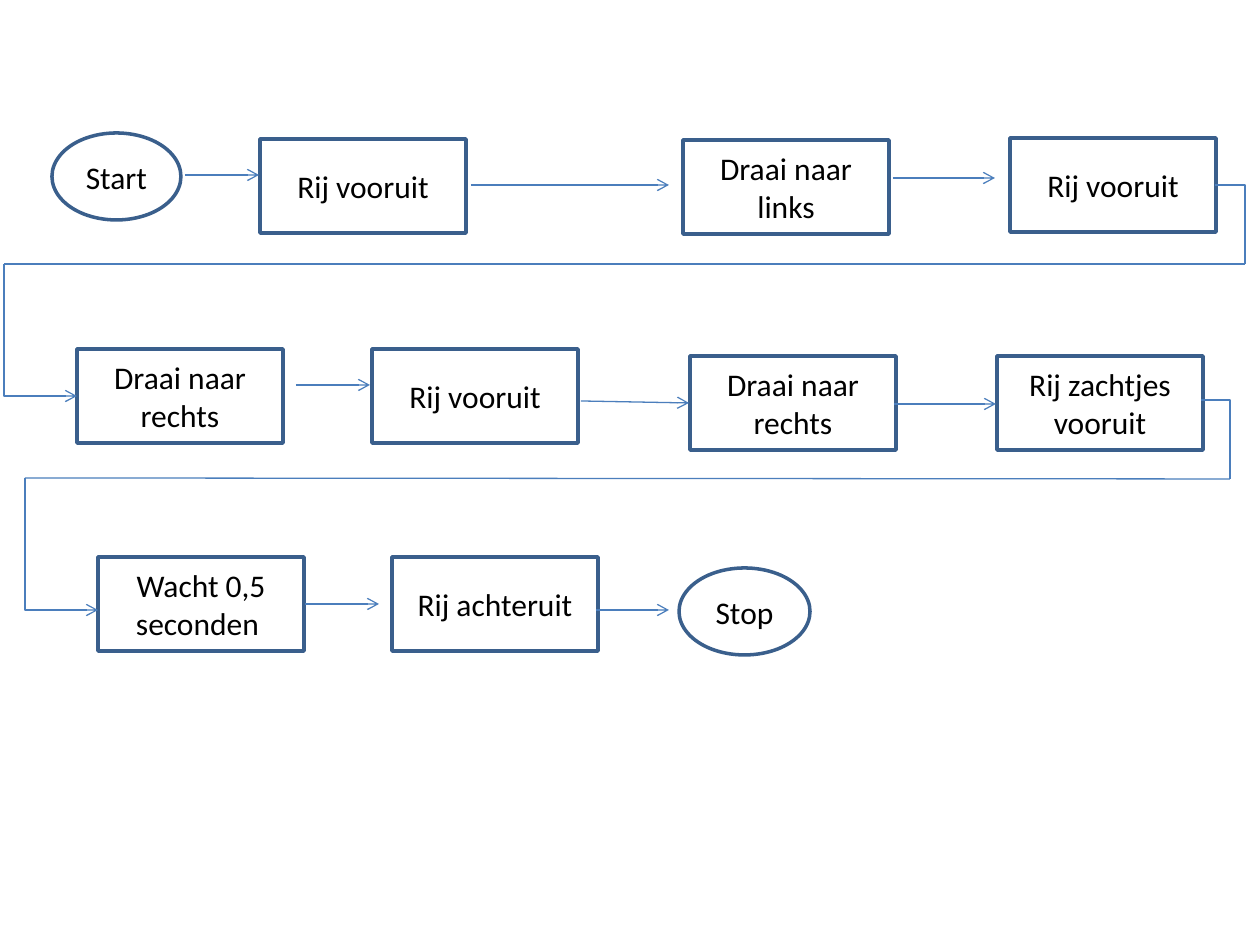
from dataclasses import dataclass
from lxml import etree
from pptx import Presentation
from pptx import util as u
from pptx.dml.color import RGBColor
from pptx.enum import shapes, text
from pptx.oxml.ns import qn

PX = 914400 // 126


@dataclass(frozen=True)
class Theme:
    font: str = "Calibri"
    size: float = 18
    ink: str = "000000"
    outline: str = "3A5F8C"
    outline_width: float = 2
    arrow: str = "4B7EBC"
    arrow_width: float = 0.75


THEME = Theme()
SLIDE_SIZE = (1260, 945)
STEP_SIZE = (206, 94)

STEPS = [
    ("Rij vooruit", 260, 139),
    ("Draai naar links", 683, 140),
    ("Rij vooruit", 1010, 138),
    ("Draai naar rechts", 77, 349),
    ("Rij vooruit", 372, 349),
    ("Draai naar rechts", 690, 356),
    ("Rij zachtjes vooruit", 997, 356),
    ("Wacht 0,5 seconden ", 98, 557),
    ("Rij achteruit", 392, 557),
]
TERMINALS = [
    ("Start", 52, 133, 129, 87),
    ("Stop", 679, 568, 131, 87),
]
ARROWS = [
    ((185, 175), (259, 175)),
    ((471, 185), (669, 185)),
    ((893, 178), (995, 178)),
    ((296, 385), (370, 385)),
    ((581, 401), (689, 403)),
    ((894, 404), (996, 404)),
    ((305, 604), (379, 604)),
    ((596, 610), (669, 610)),
]
ROW_RETURNS = [
    ((1215, 185), (1245, 264), (4, 264), (77, 396)),
    ((1201, 400), (1230, 479), (25, 478), (98, 610)),
]


def emu(*lengths):
    return [u.Emu(round(length * PX)) for length in lengths]


def add_step(slide, preset, label, *box):
    shape = slide.shapes.add_shape(preset, *emu(*box))
    shape.shadow.inherit = False
    shape.fill.background()
    shape.line.color.rgb = RGBColor.from_string(THEME.outline)
    shape.line.width = u.Pt(THEME.outline_width)
    frame = shape.text_frame
    frame.word_wrap = True
    frame.vertical_anchor = text.MSO_ANCHOR.MIDDLE
    paragraph = frame.paragraphs[0]
    paragraph.alignment = text.PP_ALIGN.CENTER
    run = paragraph.add_run()
    run.text = label
    run.font.name = THEME.font
    run.font.size = u.Pt(THEME.size)
    run.font.color.rgb = RGBColor.from_string(THEME.ink)


def add_line(slide, start, end, arrow=False, kind=shapes.MSO_CONNECTOR.STRAIGHT):
    connector = slide.shapes.add_connector(kind, *emu(*start, *end))
    connector.line.color.rgb = RGBColor.from_string(THEME.arrow)
    connector.line.width = u.Pt(THEME.arrow_width)
    properties = connector._element.spPr
    etree.SubElement(properties, qn("a:effectLst"))
    if arrow:
        etree.SubElement(properties.find(qn("a:ln")), qn("a:tailEnd"), type="arrow")
    return connector


def add_corner(slide, start, end, down_first=False):
    if down_first:
        (left, top), (right, bottom) = start, end
        center_x, center_y = (left + right) / 2, (top + bottom) / 2
        half_x, half_y = (bottom - top) / 2, (right - left) / 2
        start = (center_x + half_x, center_y - half_y)
        end = (center_x - half_x, center_y + half_y)
    connector = add_line(slide, start, end, down_first, shapes.MSO_CONNECTOR.ELBOW)
    properties = connector._element.spPr
    properties.find(qn("a:prstGeom")).set("prst", "bentConnector2")
    if down_first:
        properties.find(qn("a:xfrm")).set("rot", str(270 * 60000))


def main():
    presentation = Presentation()
    presentation.slide_width, presentation.slide_height = emu(*SLIDE_SIZE)
    slide = presentation.slides.add_slide(presentation.slide_layouts[6])
    for label, left, top in STEPS:
        add_step(slide, shapes.MSO_SHAPE.FLOWCHART_PROCESS, label, left, top, *STEP_SIZE)
    for label, *box in TERMINALS:
        add_step(slide, shapes.MSO_SHAPE.OVAL, label, *box)
    for start, end in ARROWS:
        add_line(slide, start, end, arrow=True)
    for start, right_turn, left_turn, end in ROW_RETURNS:
        add_corner(slide, start, right_turn)
        add_line(slide, right_turn, left_turn)
        add_corner(slide, left_turn, end, down_first=True)
    presentation.save("out.pptx")


if __name__ == "__main__":
    main()
